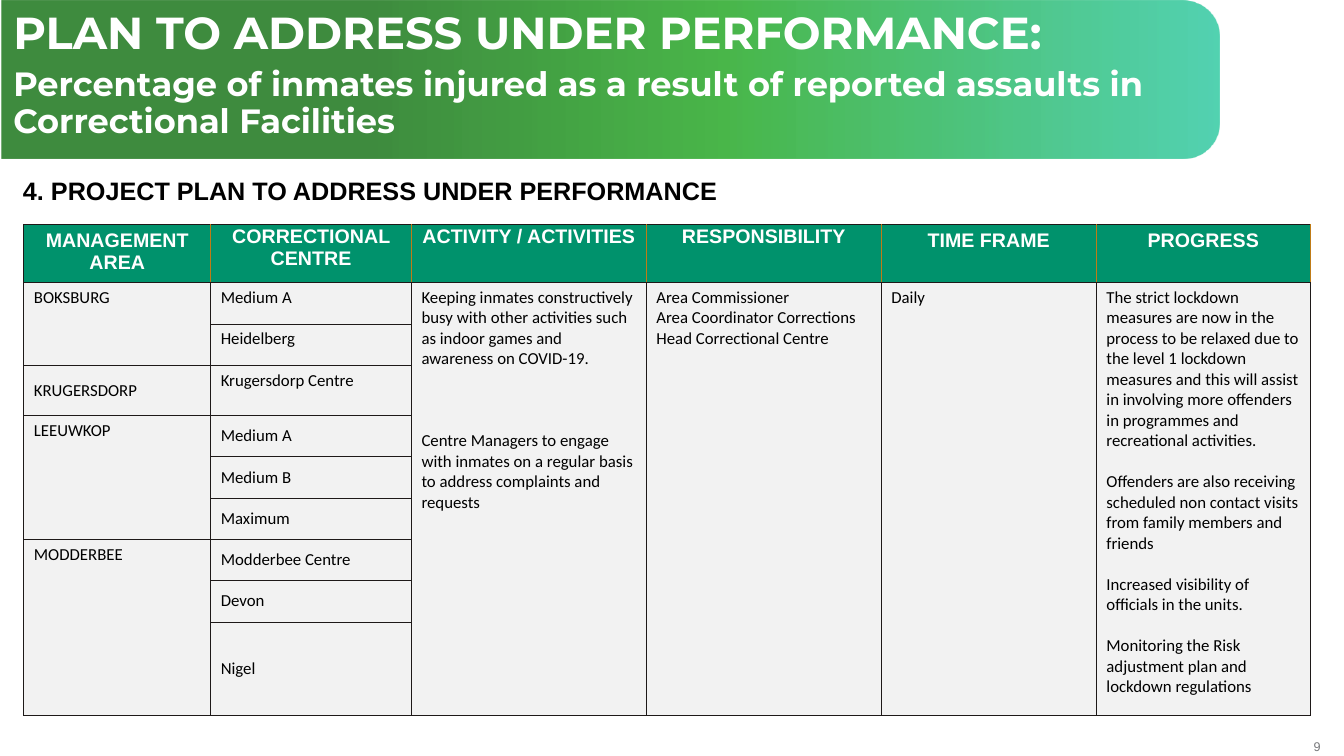
from dataclasses import dataclass
from typing import Optional

from lxml import etree
from pptx import Presentation
from pptx.dml.color import RGBColor
from pptx.enum.shapes import MSO_SHAPE as Preset
from pptx.enum.text import MSO_ANCHOR as Anchor, MSO_AUTO_SIZE as AutoSize, PP_ALIGN as Align
from pptx.oxml import parse_xml
from pptx.oxml.ns import nsdecls, qn
from pptx.util import Cm, Pt

COLORS = {
    "white": "FFFFFF", "black": "000000", "number": "77787B",
    "header": "00926C", "body": "F2F2F2", "border": "1E1918", "divider": "BF7B17",
}
# Banner gradient: position and opacity in percent
BANNER_STOPS = [(30, "006600", 75), (59, "009900", 71), (100, "00BC8D", 67)]

COLUMN_WIDTHS = [4.71, 5.06, 5.92, 5.92, 5.42, 5.39]
ROW_HEIGHTS = [1.45, 1.05, 1.05, 1.26] + [1.04] * 5 + [2.36]
LAST_ROW = len(ROW_HEIGHTS) - 1


@dataclass
class TextStyle:
    size: float
    color: str
    font: str = "Arial"
    bold: bool = False
    align: Align = Align.LEFT


@dataclass
class Entry:
    row: int
    column: int
    lines: list[str]
    last_row: Optional[int] = None
    anchor: Anchor = Anchor.TOP
    gap: float = 0


HEADER_STYLE = TextStyle(14, "white", bold=True, align=Align.CENTER)
BODY_STYLE = TextStyle(12, "black", "Calibri")

HEADERS = ["MANAGEMENT AREA", "CORRECTIONAL CENTRE", "ACTIVITY / ACTIVITIES",
           "RESPONSIBILITY", "TIME FRAME", "PROGRESS"]
TIGHT_HEADERS = range(1, 4)

AREAS = [
    Entry(1, 0, ["BOKSBURG"], 2),
    Entry(3, 0, ["KRUGERSDORP"], anchor=Anchor.MIDDLE),
    Entry(4, 0, ["LEEUWKOP"], 6),
    Entry(7, 0, ["MODDERBEE"], LAST_ROW),
]
CENTRES = ["Medium A", "Heidelberg", "Krugersdorp Centre", "Medium A", "Medium B",
           "Maximum", "Modderbee Centre", "Devon", "Nigel"]
PLANS = [
    Entry(1, 2, [
        "Keeping inmates constructively busy with other activities such as indoor games "
        "and awareness on COVID-19.",
        "Centre Managers to engage with inmates on a regular basis to address complaints "
        "and requests"], LAST_ROW, gap=44),
    Entry(1, 3, ["Area Commissioner", "Area Coordinator Corrections",
                 "Head Correctional Centre"], LAST_ROW),
    Entry(1, 4, ["Daily"], LAST_ROW),
    Entry(1, 5, [
        "The strict lockdown measures are now in the process to be relaxed due to the "
        "level 1 lockdown measures and this will assist in involving more offenders in "
        "programmes and recreational activities.",
        "Offenders are also receiving scheduled non contact visits from family members "
        "and friends",
        "Increased visibility of officials in the units.",
        "Monitoring the Risk adjustment plan and lockdown regulations"], LAST_ROW, gap=14.7),
]


def rgb(name: str) -> RGBColor:
    return RGBColor.from_string(COLORS[name])


def style_paragraph(paragraph, style: TextStyle) -> None:
    paragraph.alignment = style.align
    font = paragraph.font
    font.size, font.bold, font.name = Pt(style.size), style.bold, style.font
    font.color.rgb = rgb(style.color)


def write_lines(frame, lines: list[str], style: TextStyle, gap: float = 0) -> None:
    for index, line in enumerate(lines):
        paragraph = frame.add_paragraph() if index else frame.paragraphs[0]
        paragraph.text = line
        if index and gap:
            paragraph.space_before = Pt(gap)
        style_paragraph(paragraph, style)


def add_label(slide, left: float, top: float, width: float, height: float,
              text: str, style: TextStyle) -> None:
    frame = slide.shapes.add_textbox(Cm(left), Cm(top), Cm(width), Cm(height)).text_frame
    frame.word_wrap = True
    frame.margin_left = frame.margin_right = 0
    frame.vertical_anchor = Anchor.MIDDLE
    write_lines(frame, [text], style)


def add_banner(slide) -> None:
    banner = slide.shapes.add_shape(Preset.ROUND_2_SAME_RECTANGLE,
                                    Cm(13.39), Cm(-13.34), Cm(3.99), Cm(30.68))
    banner.rotation = 90
    banner.adjustments[0], banner.adjustments[1] = 0.233, 0
    banner.shadow.inherit = False
    banner.line.fill.background()
    stops = "".join(
        f'<a:gs pos="{position * 1000}"><a:srgbClr val="{color}">'
        f'<a:alpha val="{opacity * 1000}"/></a:srgbClr></a:gs>'
        for position, color, opacity in BANNER_STOPS)
    gradient = parse_xml(
        f'<a:gradFill {nsdecls("a")} rotWithShape="1"><a:gsLst>{stops}</a:gsLst>'
        '<a:lin ang="16200000" scaled="0"/></a:gradFill>')
    banner._element.spPr.find(qn("a:prstGeom")).addnext(gradient)


def fill_title(slide) -> None:
    title = slide.shapes.title
    title.left, title.top, title.width, title.height = Cm(0.08), Cm(0.15), Cm(30.43), Cm(1.45)
    frame = title.text_frame
    frame.auto_size, frame.vertical_anchor = AutoSize.NONE, Anchor.TOP
    frame.word_wrap = True
    write_lines(frame, [
        "PLAN TO ADDRESS UNDER PERFORMANCE:",
        "Percentage of inmates injured as a result of reported assaults in "
        "Correctional Facilities"], TextStyle(32, "white", "Montserrat", True))
    for paragraph in frame.paragraphs:
        paragraph.line_spacing, paragraph.space_after = 0.9, Pt(6)
        paragraph.space_before = Pt(0)
    frame.paragraphs[1].font.size = Pt(24)
    # Bring the title in front of the banner
    slide.shapes._spTree.append(title._element)


def set_borders(cell, colors: dict[str, str]) -> None:
    properties = cell._tc.get_or_add_tcPr()
    for index, (side, color) in enumerate(colors.items()):
        line = etree.Element(qn(f"a:ln{side}"), w=str(Pt(0.5)))
        solid = etree.SubElement(line, qn("a:solidFill"))
        etree.SubElement(solid, qn("a:srgbClr"), val=COLORS[color])
        properties.insert(index, line)


def add_plan_table(slide) -> None:
    table = slide.shapes.add_table(
        len(ROW_HEIGHTS), len(COLUMN_WIDTHS), Cm(0.6), Cm(5.66),
        Cm(sum(COLUMN_WIDTHS)), Cm(sum(ROW_HEIGHTS))).table
    table.first_row = table.horz_banding = False
    for column, width in zip(table.columns, COLUMN_WIDTHS):
        column.width = Cm(width)
    last_column = len(COLUMN_WIDTHS) - 1
    for row_index, height in enumerate(ROW_HEIGHTS):
        table.rows[row_index].height = Cm(height)
        for column_index in range(last_column + 1):
            cell = table.cell(row_index, column_index)
            is_header = row_index == 0
            cell.fill.solid()
            cell.fill.fore_color.rgb = rgb("header" if is_header else "body")
            left = "divider" if is_header and column_index else "border"
            right = "divider" if is_header else "border"
            set_borders(cell, {"L": left, "R": right, "T": "border", "B": "border"})

    # Header row
    for column_index, text in enumerate(HEADERS):
        cell = table.cell(0, column_index)
        if column_index in TIGHT_HEADERS:
            cell.margin_left = cell.margin_right = cell.margin_top = Cm(0.02)
            cell.margin_bottom = 0
        write_lines(cell.text_frame, [text], HEADER_STYLE)

    # Body cells: the first three centres sit at the top of their rows
    centres = [Entry(row, 1, [name], anchor=Anchor.TOP if row <= 3 else Anchor.MIDDLE)
               for row, name in enumerate(CENTRES, 1)]
    for entry in AREAS + centres + PLANS:
        cell = table.cell(entry.row, entry.column)
        if entry.last_row:
            cell.merge(table.cell(entry.last_row, entry.column))
        cell.vertical_anchor = entry.anchor
        write_lines(cell.text_frame, entry.lines, BODY_STYLE, entry.gap)


def main() -> None:
    presentation = Presentation()
    presentation.slide_width, presentation.slide_height = Cm(33.87), Cm(19.05)
    slide = presentation.slides.add_slide(presentation.slide_layouts[5])
    add_banner(slide)
    fill_title(slide)
    add_label(slide, 0.58, 4.29, 24, 1.02, "4. PROJECT PLAN TO ADDRESS UNDER PERFORMANCE",
              TextStyle(18, "black", bold=True))
    add_plan_table(slide)
    add_label(slide, 32.03, 18.5, 1.25, 0.6, "9", TextStyle(9, "number", align=Align.RIGHT))
    presentation.save("out.pptx")


if __name__ == "__main__":
    main()
